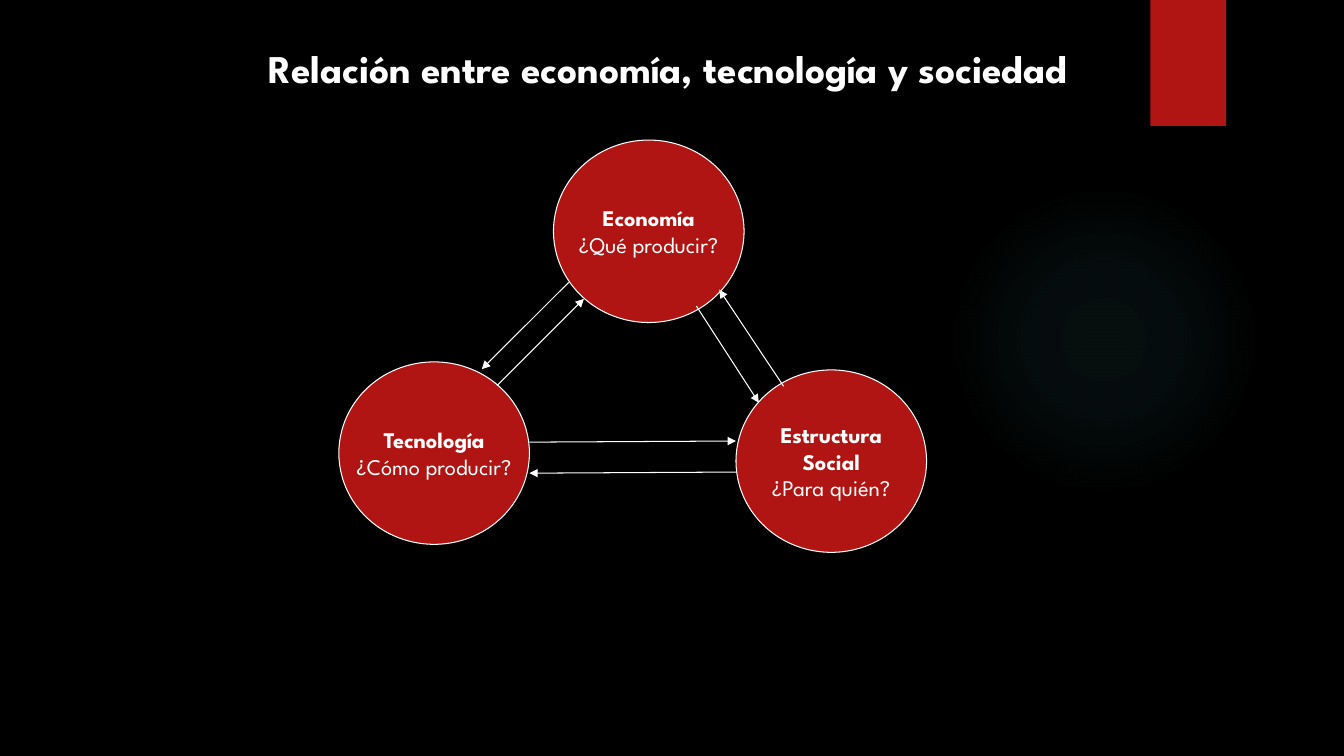
from lxml import etree
from pptx import Presentation
from pptx.dml.color import RGBColor
from pptx.enum.shapes import MSO_CONNECTOR, MSO_SHAPE
from pptx.enum.text import MSO_ANCHOR, PP_ALIGN
from pptx.oxml import parse_xml
from pptx.oxml.ns import nsdecls, qn
from pptx.util import Inches, Pt

OVAL, RECT = MSO_SHAPE.OVAL, MSO_SHAPE.RECTANGLE
STRAIGHT = MSO_CONNECTOR.STRAIGHT
CENTER, MIDDLE = PP_ALIGN.CENTER, MSO_ANCHOR.MIDDLE
BLACK = RGBColor(0x00, 0x00, 0x00)
WHITE = RGBColor(0xFF, 0xFF, 0xFF)
RED = RGBColor(0xB0, 0x15, 0x13)
TEAL = RGBColor(0x50, 0xB9, 0xC1)
FONT = "League Spartan"
WIDTH, HEIGHT = Inches(13.33), Inches(7.5)
NODE_W, NODE_H = 14.18, 24.13

NODES = {
    "economy": (41.18, 18.53, ["Economía"], "¿Qué producir?"),
    "technology": (25.21, 47.87, ["Tecnología"], "¿Cómo producir?"),
    "society": (54.76, 48.93, ["Estructura", "Social"], "¿Para quién?"),
}
ARROWS = [
    ("economy", (0.08, 0.78), "technology", (0.75, 0.04)),
    ("technology", (0.83, 0.13), "economy", (0.16, 0.87)),
    ("economy", (0.75, 0.91), "society", (0.12, 0.18)),
    ("society", (0.25, 0.09), "economy", (0.87, 0.82)),
    ("technology", (1, 0.44), "society", (0, 0.39)),
    ("society", (0, 0.56), "technology", (1, 0.61)),
]


def share(x, y, w, h):
    return [round(v * side / 100) for v, side in
            ((x, WIDTH), (y, HEIGHT), (w, WIDTH), (h, HEIGHT))]


def add_text(p, text, size=16, bold=False, color=WHITE):
    p.alignment = CENTER
    r = p.add_run()
    r.text = text
    r.font.name, r.font.size, r.font.bold = FONT, Pt(size), bold
    r.font.color.rgb = color


def add_solid(s, kind, box, line=None):
    sp = s.shapes.add_shape(kind, *box)
    sp.shadow.inherit = False
    sp.fill.solid()
    sp.fill.fore_color.rgb = RED
    if line is None:
        sp.line.fill.background()
    else:
        sp.line.color.rgb = line
        sp.line.width = Pt(0.75)
    return sp


def add_glow(s, box):
    sp = add_solid(s, OVAL, box)
    stops = "".join(
        f'<a:gs pos="{pos * 1000}"><a:srgbClr val="{TEAL}">'
        f'<a:alpha val="{alpha * 1000}"/></a:srgbClr></a:gs>'
        for pos, alpha in ((0, 7), (36, 6), (69, 0)))
    grad = parse_xml(
        f'<a:gradFill {nsdecls("a")}><a:gsLst>{stops}</a:gsLst>'
        '<a:path path="circle"><a:fillToRect l="50000" t="50000" '
        'r="50000" b="50000"/></a:path></a:gradFill>')
    solid = sp.element.spPr.find(qn("a:solidFill"))
    sp.element.spPr.replace(solid, grad)


def add_title(s, box, text):
    tf = s.shapes.add_textbox(*box).text_frame
    tf.word_wrap = True
    add_text(tf.paragraphs[0], text, size=28, bold=True)


def add_node(s, box, heading, question):
    tf = add_solid(s, OVAL, box, line=WHITE).text_frame
    tf.word_wrap = False
    tf.vertical_anchor = MIDDLE
    for i, text in enumerate(heading + [question]):
        p = tf.add_paragraph() if i else tf.paragraphs[0]
        add_text(p, text, bold=i < len(heading))


def point_on(box, at):
    x, y, w, h = box
    return round(x + at[0] * w), round(y + at[1] * h)


def add_arrow(s, start, end):
    line = s.shapes.add_connector(STRAIGHT, *start, *end)
    line.line.color.rgb = WHITE
    line.line.width = Pt(0.75)
    etree.SubElement(line.line._get_or_add_ln(), qn("a:tailEnd"), type="triangle")
    etree.SubElement(line._element.spPr, qn("a:effectLst"))


def add_diagram(s):
    boxes = {}
    for name, (x, y, heading, question) in NODES.items():
        boxes[name] = share(x, y, NODE_W, NODE_H)
        add_node(s, boxes[name], heading, question)
    for source, start, target, end in ARROWS:
        add_arrow(s, point_on(boxes[source], start), point_on(boxes[target], end))


def main():
    prs = Presentation()
    prs.slide_width, prs.slide_height = WIDTH, HEIGHT
    s = prs.slides.add_slide(prs.slide_layouts[6])
    s.background.fill.solid()
    s.background.fill.fore_color.rgb = BLACK
    add_glow(s, share(70.59, 24.4, 23.11, 41.07))
    add_solid(s, RECT, share(85.6, 0, 5.63, 16.67))
    add_title(s, share(2.85, 5.2, 93.7, 7.6),
              "Relación entre economía, tecnología y sociedad")
    add_diagram(s)
    prs.save("out.pptx")


if __name__ == "__main__":
    main()
